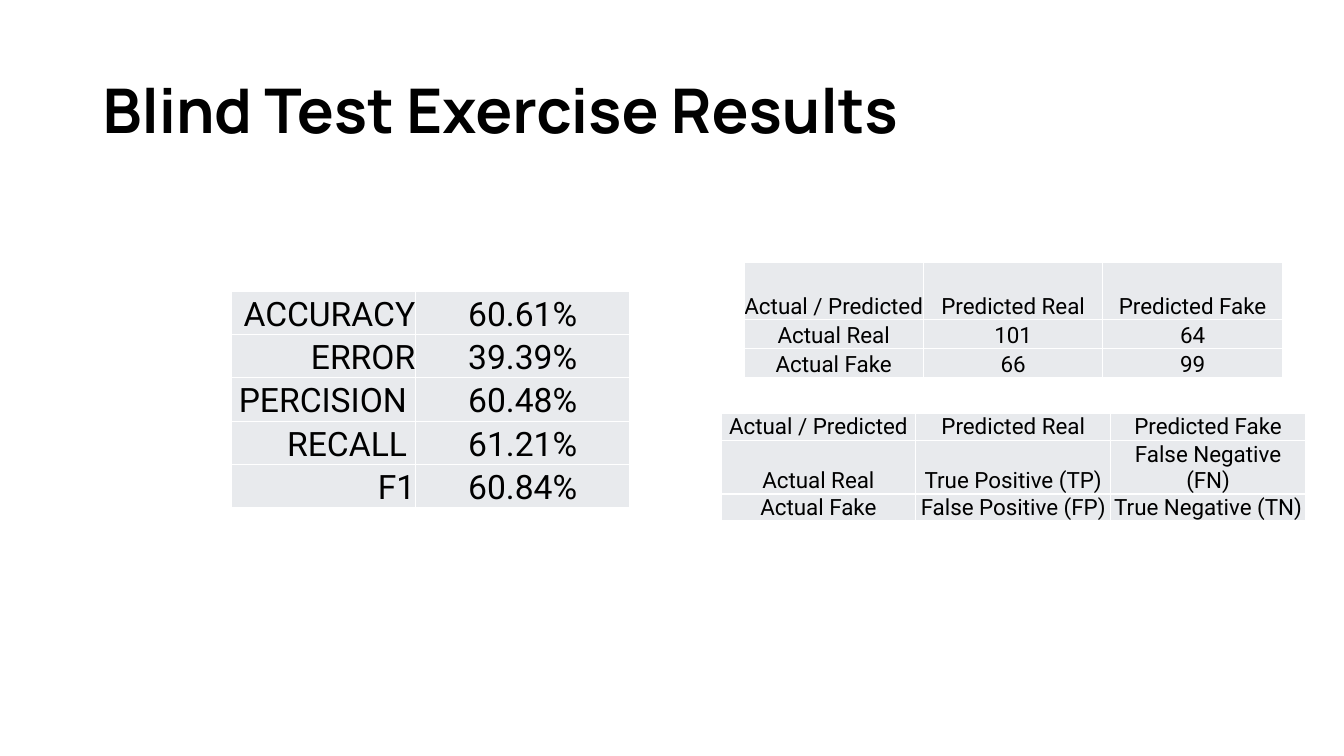
from lxml import etree
from pptx import Presentation
from pptx.dml.color import RGBColor
from pptx.enum.text import MSO_ANCHOR, PP_ALIGN
from pptx.oxml.ns import qn
from pptx.util import Inches, Pt

MIDDLE, BOTTOM = MSO_ANCHOR.MIDDLE, MSO_ANCHOR.BOTTOM
LEFT, CENTER, RIGHT = PP_ALIGN.LEFT, PP_ALIGN.CENTER, PP_ALIGN.RIGHT
WIDE, HIGH = Inches(13.33), Inches(7.5)
COLORS = {"ink": "000000", "cell": "E8EAED", "rule": "FFFFFF"}
HEADS = ["Actual / Predicted", "Predicted Real", "Predicted Fake"]
COUNTS = [HEADS, ["Actual Real", "101", "64"], ["Actual Fake", "66", "99"]]
TERMS = [
    HEADS,
    ["Actual Real", "True Positive (TP)", "False Negative (FN)"],
    ["Actual Fake", "False Positive (FP)", "True Negative (TN)"],
]
SCORES = [
    ["ACCURACY", "60.61%"],
    ["ERROR", "39.39%"],
    ["PERCISION ", "60.48%"],
    ["RECALL ", "61.21%"],
    ["F1", "60.84%"],
]


def across(share):
    """Turn a percentage of the slide width into a length."""
    return round(WIDE * share / 100)


def down(share):
    """Turn a percentage of the slide height into a length."""
    return round(HIGH * share / 100)


def write(frame, text, font, size, align, bold=False):
    """Put one styled paragraph into a text frame."""
    frame.text = text
    para = frame.paragraphs[0]
    para.alignment = align
    style = para.runs[0].font
    style.name, style.size, style.bold = font, Pt(size), bold
    style.color.rgb = RGBColor.from_string(COLORS["ink"])
    return para


def add_title(slide, text):
    """Add the slide heading."""
    box = slide.shapes.add_textbox(across(6.9), down(5.33), across(86.25), down(19.33))
    frame = box.text_frame
    frame.word_wrap = True
    frame.vertical_anchor = MIDDLE
    write(frame, text, "Manrope", 44, LEFT, True).line_spacing = 0.9


def add_rules(cell):
    """Draw a thin rule on all four sides of a cell."""
    props = cell._tc.get_or_add_tcPr()
    for spot, side in enumerate(("lnL", "lnR", "lnT", "lnB")):
        line = etree.Element(qn(f"a:{side}"), w=str(Pt(1)))
        fill = etree.SubElement(line, qn("a:solidFill"))
        etree.SubElement(fill, qn("a:srgbClr"), val=COLORS["rule"])
        props.insert(spot, line)


def fill_cell(cell, text, size, align):
    """Style one cell and write its text."""
    cell.margin_left = cell.margin_right = cell.margin_top = cell.margin_bottom = 0
    cell.vertical_anchor = BOTTOM
    cell.fill.solid()
    cell.fill.fore_color.rgb = RGBColor.from_string(COLORS["cell"])
    write(cell.text_frame, text, "Roboto", size, align)
    add_rules(cell)


def add_grid(slide, left, top, cols, rows, data, size, first=CENTER):
    """Add a table with sizes in percent of the slide."""
    table = slide.shapes.add_table(
        len(rows), len(cols), across(left), down(top), across(sum(cols)), down(sum(rows))
    ).table
    table.first_row = table.horz_banding = False
    for col, share in zip(table.columns, cols):
        col.width = across(share)
    for row, share, texts in zip(table.rows, rows, data):
        row.height = down(share)
        for spot, (cell, text) in enumerate(zip(row.cells, texts)):
            fill_cell(cell, text, size, CENTER if spot else first)


def main():
    """Build and save the slide."""
    deck = Presentation()
    deck.slide_width, deck.slide_height = WIDE, HIGH
    slide = deck.slides.add_slide(deck.slide_layouts[6])
    add_title(slide, "Blind Test Exercise Results")
    add_grid(slide, 55.36, 34.67, [13.35] * 3, [7.6, 3.87, 3.87], COUNTS, 16)
    add_grid(slide, 53.64, 54.67, [14.5] * 3, [2.93] * 3, TERMS, 16)
    add_grid(slide, 17.25, 38.53, [13.65, 15.98], [5.73] * 5, SCORES, 24, RIGHT)
    deck.save("out.pptx")


if __name__ == "__main__":
    main()
